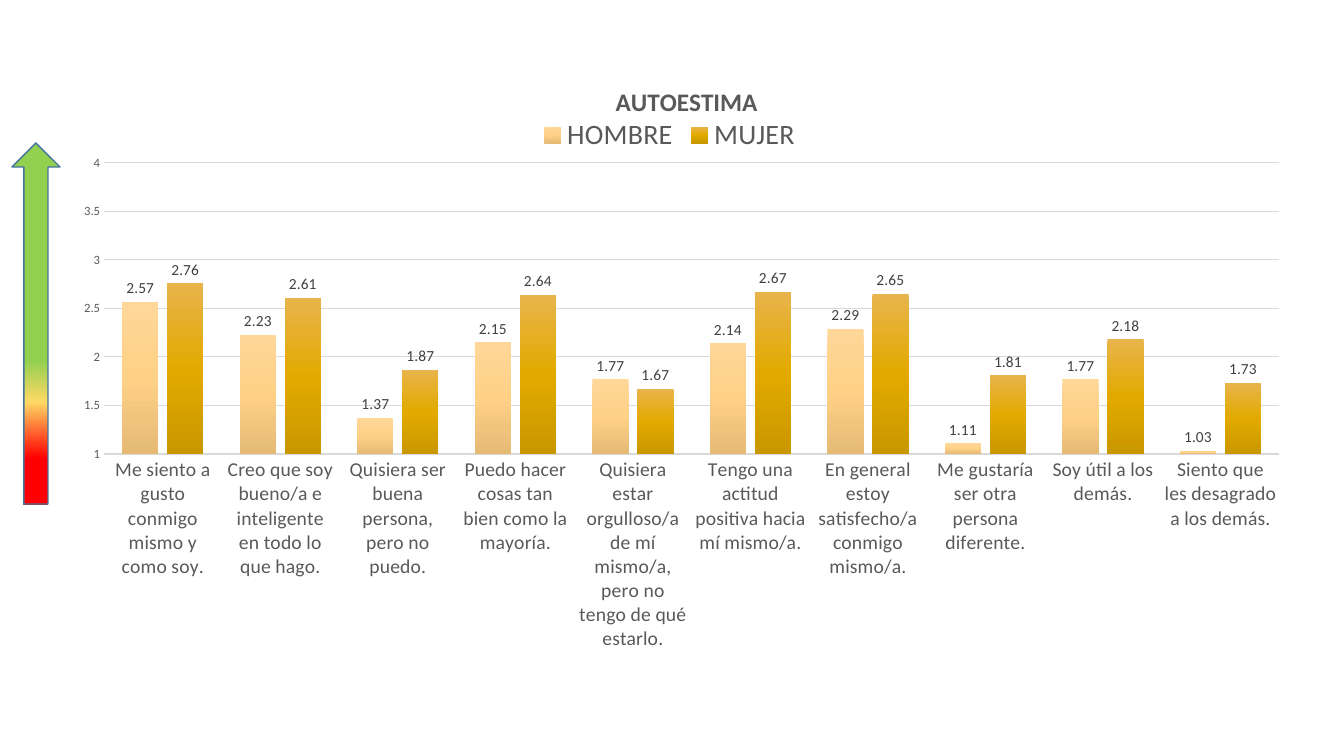
from dataclasses import dataclass

from lxml import etree
from pptx import Presentation
from pptx.chart.data import CategoryChartData
from pptx.dml.color import RGBColor
from pptx.enum.chart import (XL_CHART_TYPE, XL_LABEL_POSITION,
                             XL_LEGEND_POSITION, XL_TICK_MARK)
from pptx.enum.shapes import MSO_SHAPE
from pptx.oxml.ns import qn
from pptx.util import Inches, Pt

COLUMNS = XL_CHART_TYPE.COLUMN_CLUSTERED
OUTSIDE = XL_LABEL_POSITION.OUTSIDE_END
LEGEND_TOP = XL_LEGEND_POSITION.TOP
NO_TICK = XL_TICK_MARK.NONE
UP_ARROW = MSO_SHAPE.UP_ARROW

EMU_PER_PX = 914400 / 100.8


@dataclass(frozen=True)
class Theme:
    font: str = "Calibri"
    text: str = "595959"
    label: str = "404040"
    grid: str = "D9D9D9"
    arrow_line: str = "43739E"
    hombre: tuple = ((0, "FFD798"), (50, "FFD187"), (100, "E5BA75"))
    mujer: tuple = ((0, "E8B44B"), (50, "E2AA00"), (100, "C99700"))
    scale: tuple = ((25, "FF0000"), (56, "FFD966"), (79, "92D050"))
    title_size: int = 18
    legend_size: int = 20
    category_size: int = 14
    value_size: int = 9
    label_size: int = 11


THEME = Theme()

ANSWERS = [
    ("Me siento a gusto conmigo mismo y como soy.", 2.57, 2.76),
    ("Creo que soy bueno/a e inteligente en todo lo que hago.", 2.23, 2.61),
    ("Quisiera ser buena persona, pero no puedo.", 1.37, 1.87),
    ("Puedo hacer cosas tan bien como la mayoría.", 2.15, 2.64),
    ("Quisiera estar orgulloso/a de mí mismo/a, pero no tengo de qué estarlo.",
     1.77, 1.67),
    ("Tengo una actitud positiva hacia mí mismo/a.", 2.14, 2.67),
    ("En general estoy satisfecho/a conmigo mismo/a.", 2.29, 2.65),
    ("Me gustaría ser otra persona diferente.", 1.11, 1.81),
    ("Soy útil a los demás.", 1.77, 2.18),
    ("Siento que les desagrado a los demás.", 1.03, 1.73),
]

# Boxes in px: left, top, width, height
CHART_BOX = (59, 80, 1244, 638)
PLOT_BOX = (104, 163, 1175, 291)
ARROW_BOX = (12, 143, 48, 361)
# Corners in px: left, top (the text sets the size)
TITLE_CORNER = (611, 80)
LEGEND_CORNER = (535, 112)


def px(length):
    return round(length * EMU_PER_PX)


def style_font(font, size, color, bold=False):
    font.name = THEME.font
    font.size = Pt(size)
    font.bold = bold
    font.color.rgb = RGBColor.from_string(color)


def style_line(line, color, width):
    line.color.rgb = RGBColor.from_string(color)
    line.width = Pt(width)


def fill_gradient(fill, properties, stops, radial=False):
    """Replace the fill in a properties element by a gradient."""
    fill.solid()
    gradient = etree.Element(qn("a:gradFill"), rotWithShape="1")
    stop_list = etree.SubElement(gradient, qn("a:gsLst"))
    for position, color in stops:
        stop = etree.SubElement(stop_list, qn("a:gs"), pos=str(position * 1000))
        etree.SubElement(stop, qn("a:srgbClr"), val=color)
    if radial:
        circle = etree.SubElement(gradient, qn("a:path"))
        circle.set("path", "circle")
        etree.SubElement(circle, qn("a:fillToRect"),
                         l="50000", t="130000", r="50000", b="-30000")
    else:
        etree.SubElement(gradient, qn("a:lin"), ang="5400000", scaled="0")
    properties.replace(properties.find(qn("a:solidFill")), gradient)


def place_in_chart(element, corner, size=()):
    """Fix the place of a chart part as fractions of the chart."""
    for old in element.findall(qn("c:layout")):
        element.remove(old)
    layout = etree.Element(qn("c:layout"))
    manual = etree.SubElement(layout, qn("c:manualLayout"))
    if size:
        etree.SubElement(manual, qn("c:layoutTarget"), val="inner")
    for mode in ("xMode", "yMode"):
        etree.SubElement(manual, qn("c:" + mode), val="edge")
    chart_corner, chart_size = CHART_BOX[:2], CHART_BOX[2:]
    fractions = [(at - start) / total for at, start, total
                 in zip(corner, chart_corner, chart_size)]
    fractions += [length / total for length, total in zip(size, chart_size)]
    for name, fraction in zip("xywh", fractions):
        etree.SubElement(manual, qn("c:" + name), val=f"{fraction:.4f}")
    overlay = element.find(qn("c:overlay"))
    if overlay is None:
        element.insert(0, layout)
    else:
        overlay.addprevious(layout)


def style_axes(chart):
    statements = chart.category_axis
    statements.major_tick_mark = statements.minor_tick_mark = NO_TICK
    style_line(statements.format.line, THEME.grid, 1)
    style_font(statements.tick_labels.font, THEME.category_size, THEME.text)

    score = chart.value_axis
    score.minimum_scale, score.maximum_scale, score.major_unit = 1, 4, 0.5
    score.major_tick_mark = score.minor_tick_mark = NO_TICK
    score.format.line.fill.background()
    style_line(score.major_gridlines.format.line, THEME.grid, 0.75)
    style_font(score.tick_labels.font, THEME.value_size, THEME.text)


def style_columns(plot):
    plot.gap_width = 100
    plot.overlap = -24
    plot.vary_by_categories = False
    for series, stops in zip(plot.series, (THEME.hombre, THEME.mujer)):
        fill = series.format.fill
        fill_gradient(fill, series._element.find(qn("c:spPr")), stops)
        labels = series.data_labels
        labels.show_value = True
        labels.position = OUTSIDE
        style_font(labels.font, THEME.label_size, THEME.label)


def add_answers_chart(slide):
    statements, hombre, mujer = zip(*ANSWERS)
    data = CategoryChartData()
    data.categories = statements
    data.add_series("HOMBRE", hombre)
    data.add_series("MUJER", mujer)
    chart = slide.shapes.add_chart(COLUMNS, *map(px, CHART_BOX), data).chart
    chart.font.name = THEME.font
    chart.font.size = Pt(10)

    # Title and legend
    heading = chart.chart_title
    heading.text_frame.text = "AUTOESTIMA"
    style_font(heading.text_frame.paragraphs[0].runs[0].font,
               THEME.title_size, THEME.text, bold=True)
    chart.has_legend = True
    legend = chart.legend
    legend.position = LEGEND_TOP
    legend.include_in_layout = False
    style_font(legend.font, THEME.legend_size, THEME.text)

    style_axes(chart)
    style_columns(chart.plots[0])

    # Places inside the chart
    place_in_chart(heading._element, TITLE_CORNER)
    place_in_chart(legend._element, LEGEND_CORNER)
    plot_area = chart._chartSpace.find(".//" + qn("c:plotArea"))
    place_in_chart(plot_area, PLOT_BOX[:2], PLOT_BOX[2:])


def add_scale_arrow(slide):
    arrow = slide.shapes.add_shape(UP_ARROW, *map(px, ARROW_BOX))
    arrow.shadow.inherit = False
    fill_gradient(arrow.fill, arrow._element.spPr, THEME.scale, radial=True)
    style_line(arrow.line, THEME.arrow_line, 1)


def main():
    presentation = Presentation()
    presentation.slide_width = Inches(13.33)
    presentation.slide_height = Inches(7.5)
    slide = presentation.slides.add_slide(presentation.slide_layouts[6])
    add_answers_chart(slide)
    add_scale_arrow(slide)
    presentation.save("out.pptx")


if __name__ == "__main__":
    main()
